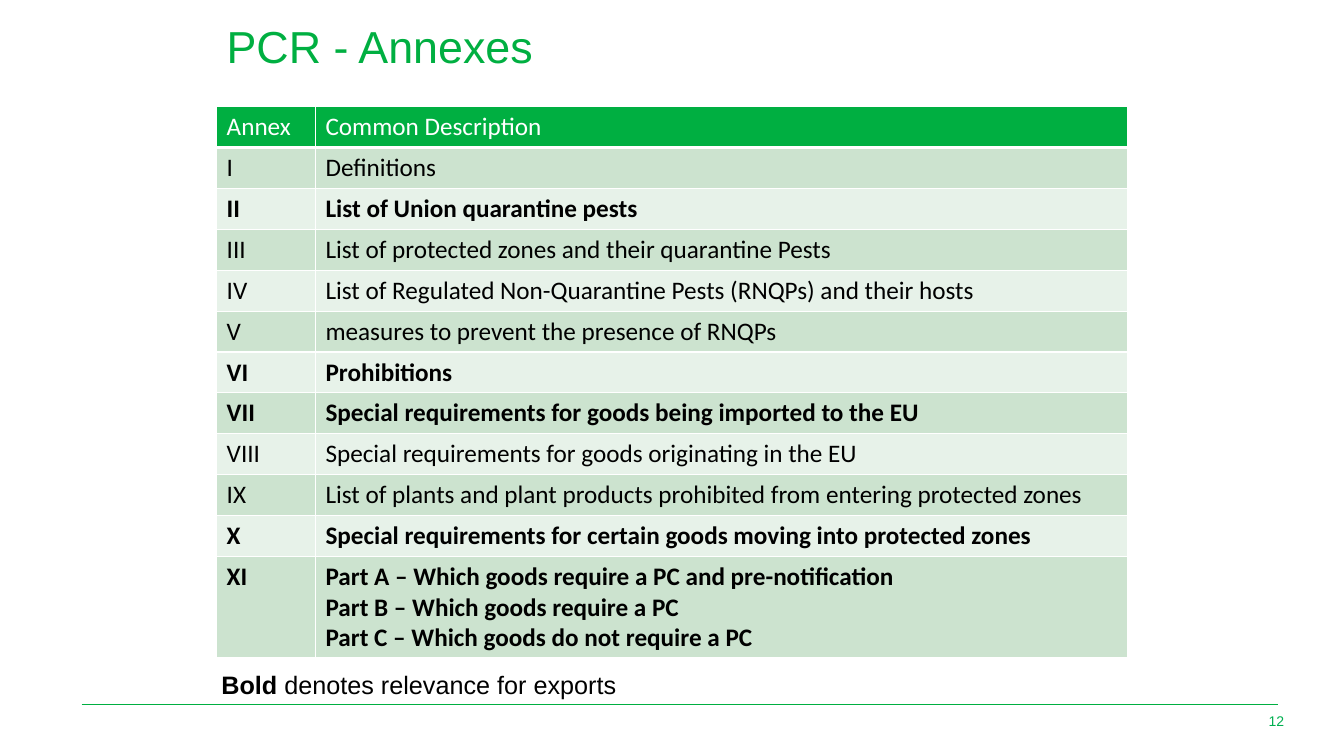
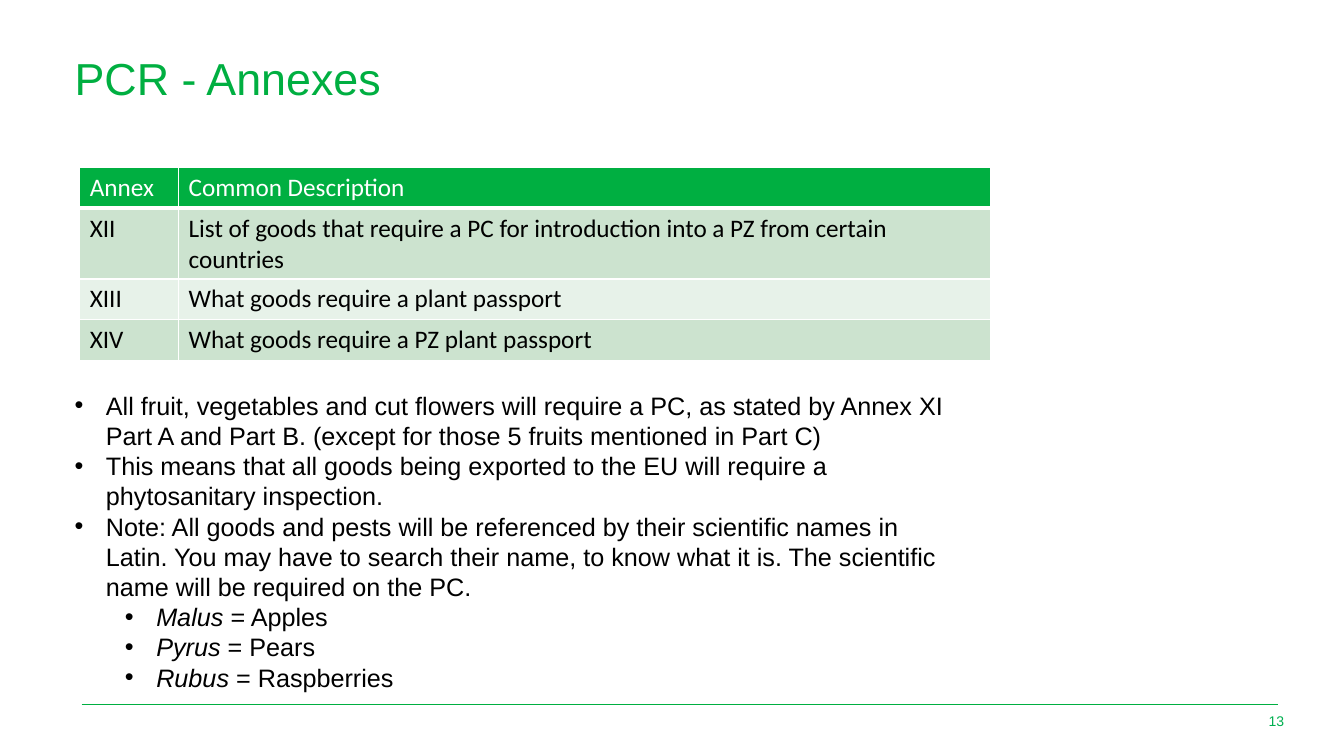
from lxml import etree
from pptx import Presentation
from pptx.dml.color import RGBColor
from pptx.enum.shapes import MSO_CONNECTOR
from pptx.enum.text import MSO_ANCHOR, PP_ALIGN
from pptx.oxml.ns import qn
from pptx.util import Cm, Pt

STRAIGHT = MSO_CONNECTOR.STRAIGHT
LEFT, RIGHT = PP_ALIGN.LEFT, PP_ALIGN.RIGHT
TOP, MIDDLE = MSO_ANCHOR.TOP, MSO_ANCHOR.MIDDLE

COLORS = {
    "green": "00AF41",
    "number": "00B050",
    "dark_band": "CCE3CF",
    "light_band": "E7F2E9",
    "black": "000000",
    "white": "FFFFFF",
}

TITLE = "PCR - Annexes"
HEADER = ("Annex", ["Common Description"], False)
ANNEXES = [
    ("I", ["Definitions"], False),
    ("II", ["List of Union quarantine pests"], True),
    ("III", ["List of protected zones and their quarantine Pests"], False),
    ("IV", ["List of Regulated Non-Quarantine Pests (RNQPs) and their hosts"], False),
    ("V", ["measures to prevent the presence of RNQPs"], False),
    ("VI", ["Prohibitions"], True),
    ("VII", ["Special requirements for goods being imported to the EU"], True),
    ("VIII", ["Special requirements for goods originating in the EU"], False),
    ("IX", ["List of plants and plant products prohibited from entering protected zones"], False),
    ("X", ["Special requirements for certain goods moving into protected zones"], True),
    ("XI", [
        "Part A – Which goods require a PC and pre-notification",
        "Part B – Which goods require a PC",
        "Part C – Which goods do not require a PC",
    ], True),
]
LATER_ANNEXES = [
    ("XII", ["List of goods that require a PC for introduction into a PZ from certain countries"], False),
    ("XIII", ["What goods require a plant passport"], False),
    ("XIV", ["What goods require a PZ plant passport"], False),
]
BOLD_NOTE = [[("Bold", "bold"), (" denotes relevance for exports", "")]]
POINTS = [
    "All fruit, vegetables and cut flowers will require a PC, as stated by Annex XI Part A and Part B. "
    "(except for those 5 fruits mentioned in Part C)",
    "This means that all goods being exported to the EU will require a phytosanitary inspection.",
    "Note: All goods and pests will be referenced by their scientific names in Latin. You may have to "
    "search their name, to know what it is. The scientific name will be required on the PC.",
]
LATIN_NAMES = [("Malus", "Apples"), ("Pyrus", "Pears"), ("Rubus", "Raspberries")]

COLUMN_WIDTHS = (2.49, 20.47)
ROW_HEIGHT, EXTRA_LINE = 1.03, 0.76
BULLET_HANG, LEVEL_STEP = 0.79, 1.27


def rgb(name):
    return RGBColor.from_string(COLORS[name])


def add_bullet(para, level):
    para.level = level
    properties = para._p.get_or_add_pPr()
    properties.set("marL", str(Cm(BULLET_HANG + level * LEVEL_STEP)))
    properties.set("indent", str(-Cm(BULLET_HANG)))
    etree.SubElement(properties, qn("a:buFont")).set("typeface", "Arial")
    etree.SubElement(properties, qn("a:buChar")).set("char", "•")


def write_text(frame, paragraphs, size=18, font="Arial", color="black", bold=False,
               align=LEFT, spacing=None, levels=None):
    for index, spans in enumerate(paragraphs):
        para = frame.paragraphs[0] if index == 0 else frame.add_paragraph()
        para.alignment = align
        if spacing:
            para.line_spacing = spacing
        if levels:
            add_bullet(para, levels[index])
        for text, style in [(spans, "")] if isinstance(spans, str) else spans:
            span = para.add_run()
            span.text = text
            span.font.size = Pt(size)
            span.font.name = font
            span.font.color.rgb = rgb(color)
            span.font.bold = bold or style == "bold"
            span.font.italic = style == "italic"


def add_text(page, place, paragraphs, anchor=TOP, **text_format):
    box = page.shapes.add_textbox(*map(Cm, place))
    box.text_frame.word_wrap = True
    box.text_frame.vertical_anchor = anchor
    write_text(box.text_frame, paragraphs, **text_format)


def add_borders(cell, bottom):
    properties = cell._tc.get_or_add_tcPr()
    for side, width in (("L", 1), ("R", 1), ("T", 1), ("B", bottom)):
        line = etree.SubElement(properties, qn(f"a:ln{side}"))
        line.set("w", str(Pt(width)))
        fill = etree.SubElement(line, qn("a:solidFill"))
        etree.SubElement(fill, qn("a:srgbClr")).set("val", COLORS["white"])


def add_annex_table(page, left, top, annexes):
    rows = [HEADER] + annexes
    heights = [ROW_HEIGHT + EXTRA_LINE * (len(lines) - 1) for _, lines, _ in rows]
    table = page.shapes.add_table(
        len(rows), len(COLUMN_WIDTHS), Cm(left), Cm(top), Cm(sum(COLUMN_WIDTHS)), Cm(sum(heights))
    ).table
    for column, width in zip(table.columns, COLUMN_WIDTHS):
        column.width = Cm(width)
    for index, (annex, lines, bold) in enumerate(rows):
        table.rows[index].height = Cm(heights[index])
        is_header = index == 0
        band = "green" if is_header else ("light_band", "dark_band")[index % 2]
        for column, paragraphs in enumerate(([annex], lines)):
            cell = table.cell(index, column)
            add_borders(cell, bottom=3 if is_header else 1)
            cell.fill.solid()
            cell.fill.fore_color.rgb = rgb(band)
            write_text(cell.text_frame, paragraphs, font="Calibri", bold=bold,
                       color="white" if is_header else "black")


def add_page(deck, number, title_place):
    page = deck.slides.add_slide(deck.slide_layouts[6])
    rule = page.shapes.add_connector(STRAIGHT, Cm(2.06), Cm(17.74), Cm(32.2), Cm(17.74))
    rule.line.color.rgb = rgb("green")
    rule.line.width = Pt(0.5)
    etree.SubElement(rule._element.spPr, qn("a:effectLst"))
    add_text(page, title_place, [TITLE], size=32, color="green", spacing=0.9)
    add_text(page, (31.09, 17.65, 1.52, 1.02), [str(number)], anchor=MIDDLE,
             size=10, color="number", align=RIGHT)
    return page


def main():
    deck = Presentation()
    deck.slide_width, deck.slide_height = Cm(33.87), Cm(19.05)

    page = add_page(deck, 12, (5.46, 0.51, 22.96, 1.35))
    add_annex_table(page, 5.46, 2.69, ANNEXES)
    add_text(page, (5.33, 16.74, 23.09, 1.02), BOLD_NOTE)

    page = add_page(deck, 13, (1.63, 1.3, 30.61, 1.35))
    add_annex_table(page, 2.01, 4.22, LATER_ANNEXES)
    names = [[(latin, "italic"), (f" = {english}", "")] for latin, english in LATIN_NAMES]
    levels = [0] * len(POINTS) + [1] * len(names)
    add_text(page, (1.63, 9.7, 22.96, 7.95), POINTS + names, levels=levels)

    deck.save("out.pptx")


if __name__ == "__main__":
    main()
